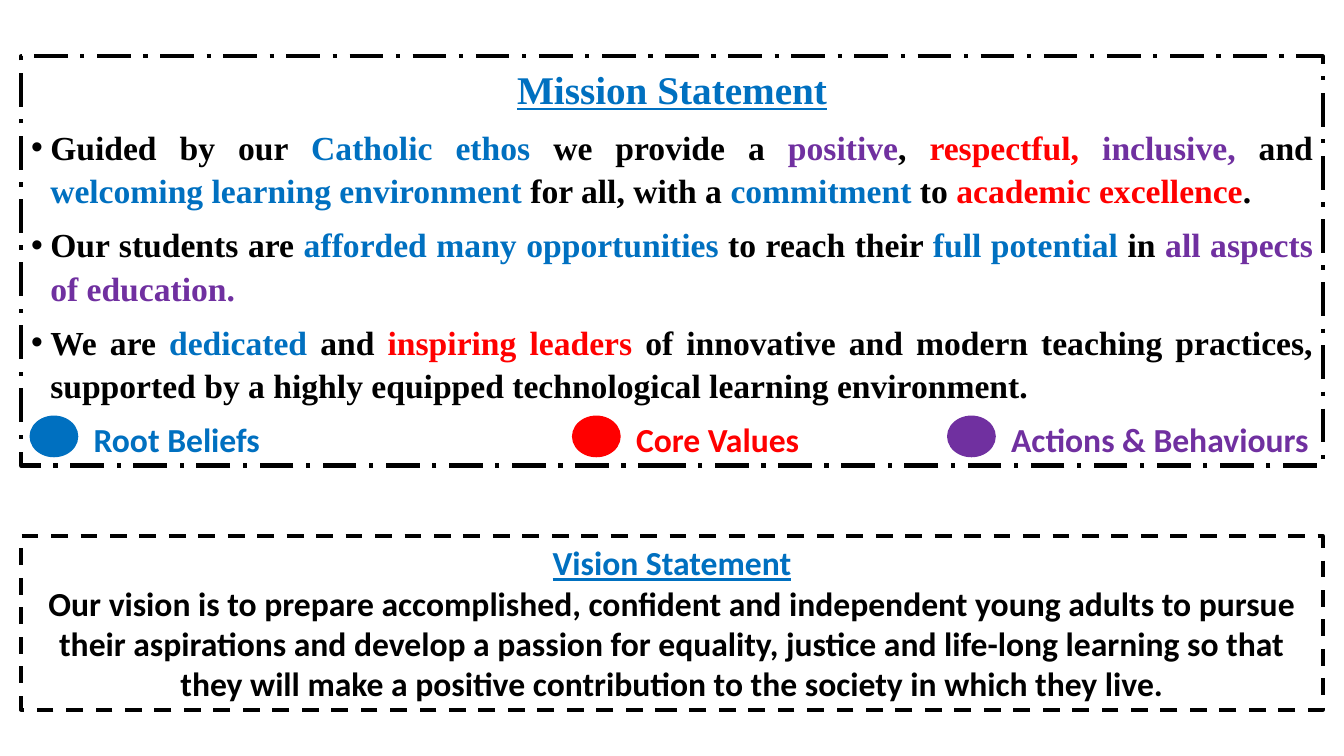
from lxml.etree import SubElement
from pptx import Presentation
from pptx.dml.color import RGBColor
from pptx.enum.dml import MSO_LINE
from pptx.enum.shapes import MSO_SHAPE
from pptx.enum.text import MSO_ANCHOR, MSO_AUTO_SIZE, PP_ALIGN
from pptx.oxml.ns import qn
from pptx.util import Inches, Pt

BLACK, BLUE, RED, PURPLE = "000000", "0070C0", "FF0000", "7030A0"
SERIF, SANS = "Times New Roman", "Calibri"
BOX_LEFT, BOX_WIDTH = 0.21, 12.91

MISSION = [
    [("Guided by our ", BLACK), ("Catholic ethos ", BLUE), ("we provide a ", BLACK),
     ("positive", PURPLE), (", ", BLACK), ("respectful, ", RED), ("inclusive,", PURPLE),
     (" and ", BLACK), ("welcoming learning environment ", BLUE),
     ("for all, with a ", BLACK), ("commitment", BLUE), (" to ", BLACK),
     ("academic excellence", RED), (".", BLACK)],
    [("Our students are ", BLACK), ("afforded many opportunities ", BLUE),
     ("to reach their ", BLACK), ("full potential", BLUE), (" in ", BLACK),
     ("all aspects of education.", PURPLE)],
    [("We are ", BLACK), ("dedicated", BLUE), (" and ", BLACK), ("inspiring leaders", RED),
     (" of innovative and modern teaching practices, supported by a highly equipped "
      "technological learning environment.", BLACK)],
]
VISION = ("Our vision is to prepare accomplished, confident and independent young adults "
          "to pursue their aspirations and develop a passion for equality, justice and "
          "life-long learning so that they will make a positive contribution to the "
          "society in which they live.")
LEGEND = [("Root Beliefs", BLUE, 0.3), ("Core Values", RED, 5.68),
          ("Actions & Behaviours", PURPLE, 9.4)]


def color(value):
    return RGBColor.from_string(value)


class StatementSlide:
    def __init__(self, slide, line_spacing=1.07, space_after=8):
        self.slide = slide
        self.line_spacing = line_spacing
        self.space_after = space_after

    def shape(self, kind, left, top, width, height, line, line_width):
        shape = self.slide.shapes.add_shape(
            kind, Inches(left), Inches(top), Inches(width), Inches(height))
        shape.shadow.inherit = False
        shape.line.color.rgb = color(line)
        shape.line.width = Pt(line_width)
        return shape

    def box(self, top, height, dash):
        shape = self.shape(MSO_SHAPE.RECTANGLE, BOX_LEFT, top, BOX_WIDTH, height, BLACK, 3)
        shape.fill.background()
        shape.line.dash_style = dash
        text_frame = shape.text_frame
        text_frame.word_wrap = True
        text_frame.auto_size = MSO_AUTO_SIZE.SHAPE_TO_FIT_TEXT
        text_frame.vertical_anchor = MSO_ANCHOR.MIDDLE
        return text_frame

    def dot(self, left, fill):
        shape = self.shape(MSO_SHAPE.OVAL, left, 4.13, 0.47, 0.4, fill, 1)
        shape.fill.solid()
        shape.fill.fore_color.rgb = color(fill)

    def paragraph(self, text_frame, pieces, font, size=24,
                  align=PP_ALIGN.CENTER, underline=False, spaced=True):
        first = text_frame.paragraphs[0]
        paragraph = text_frame.add_paragraph() if first.runs else first
        paragraph.alignment = align
        if spaced:
            paragraph.line_spacing = self.line_spacing
            paragraph.space_after = Pt(self.space_after)
        for text, tint in pieces:
            run = paragraph.add_run()
            run.text = text
            run.font.name = font
            run.font.size = Pt(size)
            run.font.bold = True
            run.font.underline = underline
            run.font.color.rgb = color(tint)
        return paragraph

    def bullet(self, text_frame, pieces):
        paragraph = self.paragraph(text_frame, pieces, SERIF, align=PP_ALIGN.JUSTIFY)
        properties = paragraph._p.get_or_add_pPr()
        properties.set("marL", str(Inches(0.19)))
        properties.set("indent", str(Inches(-0.19)))
        SubElement(properties, qn("a:buFont"), typeface="Arial")
        SubElement(properties, qn("a:buChar"), char="•")

    def legend(self, text_frame, entries):
        pieces = [("\t" + label, tint) for label, tint, _ in entries]
        paragraph = self.paragraph(text_frame, pieces, SANS, align=PP_ALIGN.LEFT)
        tabs = SubElement(paragraph._p.get_or_add_pPr(), qn("a:tabLst"))
        for _, tint, left in entries:
            self.dot(left, tint)
            SubElement(tabs, qn("a:tab"), pos=str(Inches(left + 0.32)), algn="l")


def main():
    presentation = Presentation()
    presentation.slide_width = Inches(13.33)
    presentation.slide_height = Inches(7.5)
    page = StatementSlide(presentation.slides.add_slide(presentation.slide_layouts[6]))

    mission = page.box(0.56, 4.06, MSO_LINE.LONG_DASH_DOT)
    page.paragraph(mission, [("Mission Statement", BLUE)], SERIF, 28, underline=True)
    for pieces in MISSION:
        page.bullet(mission, pieces)
    page.legend(mission, LEGEND)

    vision = page.box(5.32, 1.72, MSO_LINE.DASH)
    page.paragraph(vision, [("Vision Statement", BLUE)], SANS, underline=True, spaced=False)
    page.paragraph(vision, [(VISION, BLACK)], SANS, spaced=False)

    presentation.save("out.pptx")


if __name__ == "__main__":
    main()
